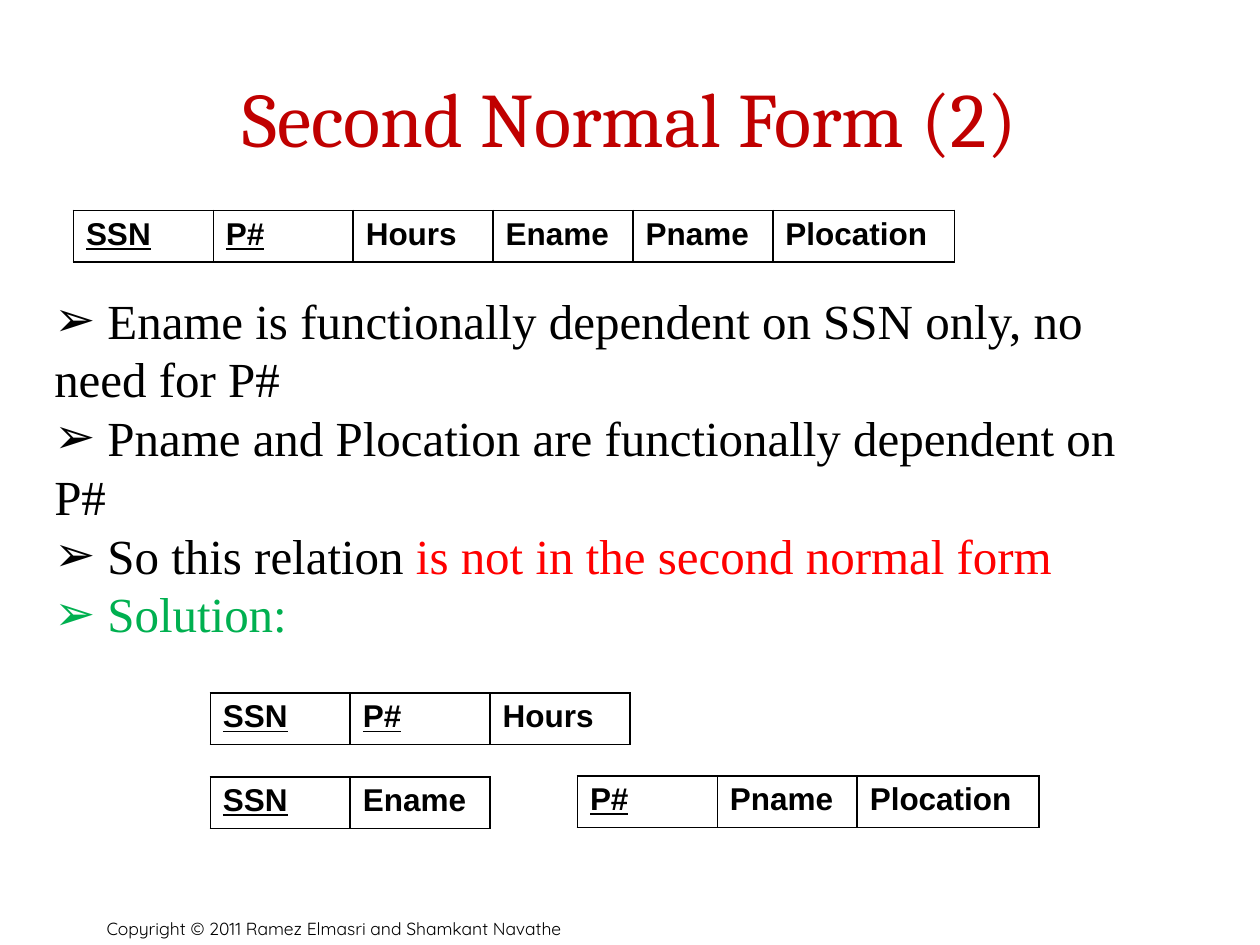
from dataclasses import dataclass

from lxml import etree
from pptx import Presentation
from pptx.dml.color import RGBColor
from pptx.enum.text import MSO_ANCHOR, MSO_AUTO_SIZE, PP_ALIGN
from pptx.oxml.ns import qn
from pptx.util import Cm, Pt

MIDDLE, BOTTOM = MSO_ANCHOR.MIDDLE, MSO_ANCHOR.BOTTOM
NO_AUTOFIT = MSO_AUTO_SIZE.NONE
CENTER, LEFT = PP_ALIGN.CENTER, PP_ALIGN.LEFT

COLORS = {
    "black": "000000",
    "title": "C00000",
    "warning": "FF0000",
    "solution": "00B050",
}
COLUMN_WIDTH = Cm(2.82)
WIDE_COLUMN_WIDTH = Cm(3.66)
ROW_HEIGHT = Cm(1.04)
BORDER_WIDTH = Pt(1)
KEY_ATTRIBUTES = {"SSN", "P#"}
WIDE_ATTRIBUTES = {"Plocation"}


@dataclass
class Relation:
    left: float
    top: float
    attributes: list[str]


@dataclass
class Phrase:
    text: str
    color: str = "black"


RELATIONS = [
    Relation(1.48, 4.24, ["SSN", "P#", "Hours", "Ename", "Pname", "Plocation"]),
    Relation(4.24, 13.97, ["SSN", "P#", "Hours"]),
    Relation(4.24, 15.66, ["SSN", "Ename"]),
    Relation(11.64, 15.64, ["P#", "Pname", "Plocation"]),
]
BULLETS = [
    [Phrase(" Ename is functionally dependent on SSN only, no need for P#")],
    [Phrase(" Pname and Plocation are functionally dependent on P#")],
    [Phrase(" So this relation "), Phrase("is not in the second normal form", "warning")],
    [Phrase(" Solution:", "solution")],
]


def place(shape, left: float, top: float, width: float, height: float) -> None:
    shape.left, shape.top = Cm(left), Cm(top)
    shape.width, shape.height = Cm(width), Cm(height)


def add_run(paragraph, phrase: Phrase, font_name: str, size: int):
    run = paragraph.add_run()
    run.text = phrase.text
    run.font.name = font_name
    run.font.size = Pt(size)
    run.font.color.rgb = RGBColor.from_string(COLORS[phrase.color])
    return run


def set_arrow_bullet(paragraph) -> None:
    properties = paragraph._p.get_or_add_pPr()
    properties.set("marL", "0")
    properties.set("indent", "0")
    etree.SubElement(properties, qn("a:buFont")).set("typeface", "Arial")
    etree.SubElement(properties, qn("a:buChar")).set("char", "➢")


def set_borders(cell) -> None:
    properties = cell._tc.get_or_add_tcPr()
    for position, side in enumerate(("a:lnL", "a:lnR", "a:lnT", "a:lnB")):
        line = etree.Element(qn(side), w=str(BORDER_WIDTH))
        fill = etree.SubElement(line, qn("a:solidFill"))
        etree.SubElement(fill, qn("a:srgbClr")).set("val", COLORS["black"])
        properties.insert(position, line)


def add_relation(slide, relation: Relation) -> None:
    widths = [WIDE_COLUMN_WIDTH if name in WIDE_ATTRIBUTES else COLUMN_WIDTH
              for name in relation.attributes]
    table = slide.shapes.add_table(1, len(widths), Cm(relation.left), Cm(relation.top),
                                   sum(widths), ROW_HEIGHT).table
    table.first_row = False
    table.horz_banding = False
    for index, (name, width) in enumerate(zip(relation.attributes, widths)):
        table.columns[index].width = width
        cell = table.cell(0, index)
        cell.fill.background()
        set_borders(cell)
        run = add_run(cell.text_frame.paragraphs[0], Phrase(name), "Arial", 18)
        run.font.bold = True
        run.font.underline = name in KEY_ATTRIBUTES


def fill_title(title) -> None:
    place(title, 1.27, 0.76, 22.86, 3.18)
    frame = title.text_frame
    frame.auto_size = NO_AUTOFIT
    frame.vertical_anchor = MIDDLE
    frame.margin_left = frame.margin_right = frame.margin_top = frame.margin_bottom = 0
    paragraph = frame.paragraphs[0]
    paragraph.alignment = CENTER
    add_run(paragraph, Phrase("Second Normal Form (2)", "title"), "Cambria", 44)


def fill_body(body) -> None:
    place(body, 0.84, 5.72, 22.66, 7.44)
    frame = body.text_frame
    frame.auto_size = NO_AUTOFIT
    for index, phrases in enumerate(BULLETS):
        paragraph = frame.add_paragraph() if index else frame.paragraphs[0]
        set_arrow_bullet(paragraph)
        paragraph.alignment = LEFT
        paragraph.space_before = Pt(0)
        paragraph.line_spacing = Pt(33.6)
        for phrase in phrases:
            add_run(paragraph, phrase, "Times New Roman", 28)


def add_copyright(slide) -> None:
    box = slide.shapes.add_textbox(Cm(1.9), Cm(18.21), Cm(18.19), Cm(0.84))
    frame = box.text_frame
    frame.word_wrap = True
    frame.vertical_anchor = BOTTOM
    notice = Phrase("Copyright © 2011 Ramez Elmasri and Shamkant Navathe")
    add_run(frame.paragraphs[0], notice, "Quicksand", 10)


def main() -> None:
    presentation = Presentation()
    presentation.slide_width, presentation.slide_height = Cm(25.4), Cm(19.05)
    slide = presentation.slides.add_slide(presentation.slide_layouts[1])
    fill_title(slide.shapes.title)
    fill_body(slide.placeholders[1])
    add_copyright(slide)
    for relation in RELATIONS:
        add_relation(slide, relation)
    presentation.save("out.pptx")


if __name__ == "__main__":
    main()
